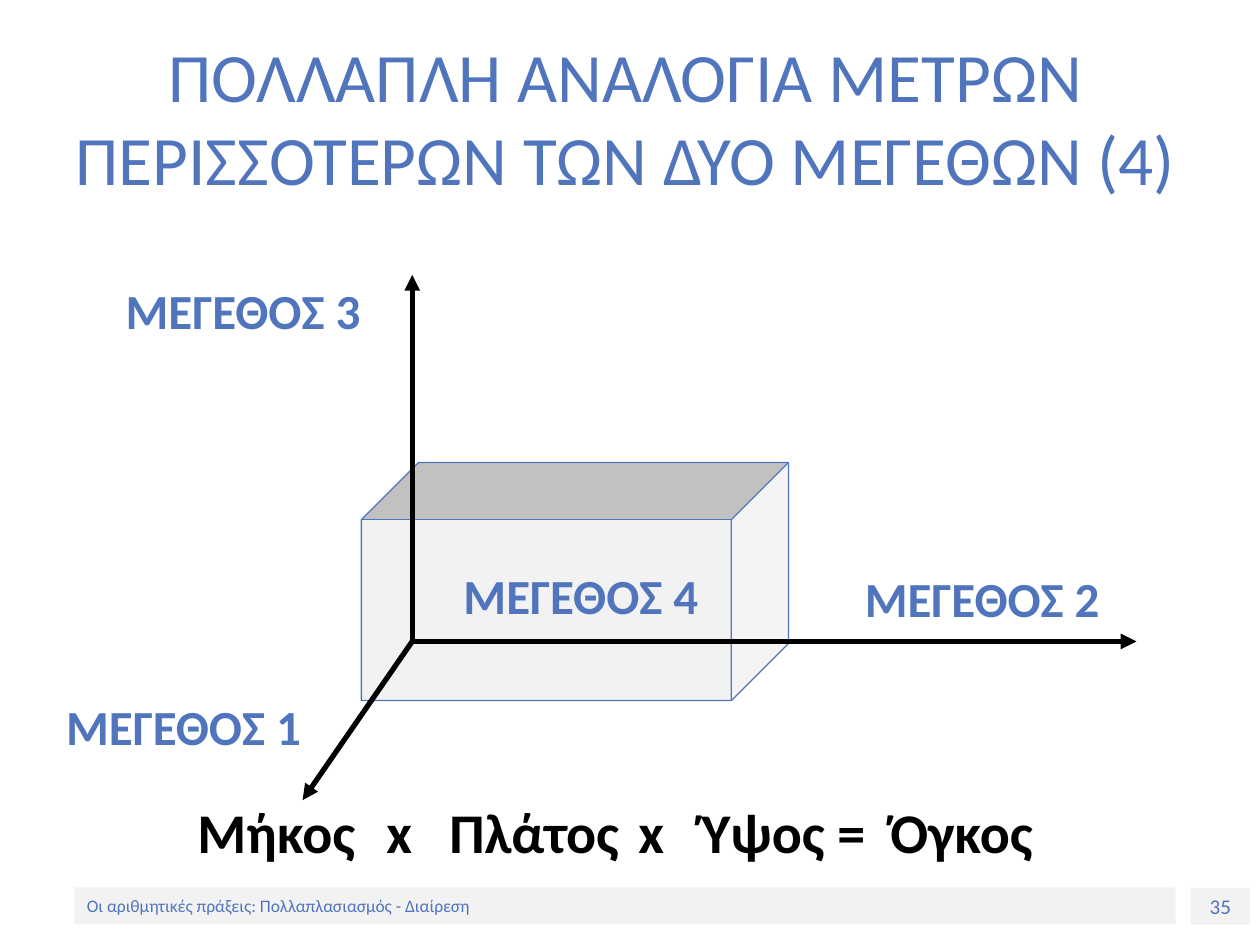
from dataclasses import dataclass

from lxml import etree
from pptx import Presentation
from pptx import util as u
from pptx.dml.color import RGBColor
from pptx.enum import shapes, text
from pptx.oxml.ns import qn


@dataclass(frozen=True)
class Theme:
    font: str = "Calibri"
    accent: RGBColor = RGBColor(0x50, 0x75, 0xBC)
    pale: RGBColor = RGBColor(0xF2, 0xF2, 0xF2)
    ink: RGBColor = RGBColor(0, 0, 0)
    title: float = 39.6
    formula: float = 32
    label: float = 28
    number: float = 12
    footer: float = 10


def write(frame, words, size, color, font, bold=False,
          align=text.PP_ALIGN.CENTER, anchor=text.MSO_ANCHOR.TOP):
    """Fill a text frame with one formatted paragraph."""
    frame.word_wrap = True
    frame.auto_size = text.MSO_AUTO_SIZE.NONE
    frame.vertical_anchor = anchor
    frame.text = words
    paragraph = frame.paragraphs[0]
    paragraph.alignment = align
    for run in paragraph.runs:
        run.font.name = font
        run.font.size = u.Pt(size)
        run.font.bold = bold
        run.font.color.rgb = color
    return paragraph


class SlideBuilder:
    def __init__(self, slide, theme):
        self.slide = slide
        self.theme = theme

    def title(self, words, box):
        heading = self.slide.shapes.title
        heading.left, heading.top, heading.width, heading.height = map(u.Cm, box)
        write(heading.text_frame, words, self.theme.title, self.theme.accent,
              self.theme.font, anchor=text.MSO_ANCHOR.MIDDLE)

    def label(self, words, box, size=None, color=None, **style):
        frame = self.slide.shapes.add_textbox(*map(u.Cm, box)).text_frame
        return write(frame, words, size or self.theme.label,
                     color or self.theme.accent, self.theme.font, bold=True, **style)

    def tabbed(self, words, box, indent, stops):
        paragraph = self.label(words, box, self.theme.formula, self.theme.ink,
                               align=text.PP_ALIGN.LEFT)
        properties = paragraph._p.get_or_add_pPr()
        properties.set("marL", str(u.Cm(indent)))
        properties.set("indent", "0")
        tabs = etree.SubElement(properties, qn("a:tabLst"))
        for stop in stops:
            etree.SubElement(tabs, qn("a:tab"), pos=str(u.Cm(stop)), algn="l")

    def solid(self, kind, box):
        shape = self.slide.shapes.add_shape(kind, *map(u.Cm, box))
        shape.shadow.inherit = False
        shape.fill.solid()
        shape.fill.fore_color.rgb = self.theme.pale
        return shape

    def band(self, words, box, size, align):
        strip = self.solid(shapes.MSO_SHAPE.RECTANGLE, box)
        strip.line.fill.background()
        write(strip.text_frame, words, size, self.theme.accent, self.theme.font,
              align=align, anchor=text.MSO_ANCHOR.MIDDLE)

    def cuboid(self, box, depth):
        block = self.solid(shapes.MSO_SHAPE.CUBE, box)
        block.adjustments[0] = depth
        block.line.color.rgb = self.theme.accent
        block.line.width = u.Pt(0.75)
        block.rotation = 270
        block._element.spPr.find(qn("a:xfrm")).set("flipV", "1")

    def axis(self, start, end):
        arrow = self.slide.shapes.add_connector(
            shapes.MSO_CONNECTOR.STRAIGHT, *map(u.Cm, start + end))
        arrow.line.color.rgb = self.theme.ink
        arrow.line.width = u.Pt(3)
        etree.SubElement(arrow.line._get_or_add_ln(), qn("a:tailEnd"), type="triangle")
        etree.SubElement(arrow._element.spPr, qn("a:effectLst"))


def main():
    deck = Presentation()
    deck.slide_width, deck.slide_height = u.Cm(25.4), u.Cm(19.05)
    theme = Theme()
    page = SlideBuilder(deck.slides.add_slide(deck.slide_layouts[5]), theme)

    # Footer and page number
    page.band("35", (24, 17.9, 1.2, 0.74), theme.number, text.PP_ALIGN.CENTER)
    page.band("Οι αριθμητικές πράξεις: Πολλαπλασιασμός - Διαίρεση",
              (1.5, 17.89, 22.2, 0.74), theme.footer, text.PP_ALIGN.LEFT)

    page.title("ΠΟΛΛΑΠΛΗ ΑΝΑΛΟΓΙΑ ΜΕΤΡΩΝ\vΠΕΡΙΣΣΟΤΕΡΩΝ ΤΩΝ ΔΥΟ ΜΕΓΕΘΩΝ (4)",
               (0.71, 0.76, 23.8, 3.18))

    # Volume with the three axes of its measures
    page.cuboid((9.19, 7.42, 4.8, 8.61), depth=0.24)
    origin = (8.31, 12.93)
    for tip in ((6.1, 16.13), (22.91, 12.93), (8.31, 5.54)):
        page.axis(origin, tip)

    # Names of the magnitudes: left, top, width
    label_height = 1.45
    places = ((0.3, 13.92, 6.8), (16, 11.33, 7.6), (1.7, 5.54, 6.4), (8.31, 11.28, 6.8))
    for number, place in enumerate(places, 1):
        page.label(f"ΜΕΓΕΘΟΣ {number}", place + (label_height,))

    # Formula, with its terms on tab stops
    page.tabbed("Μήκος\tx\tΠλάτος\tx\tΎψος =\tΌγκος", (1.9, 15.95, 21, 1.78),
                indent=1.83, stops=(5.77, 7.06, 10.97, 11.89, 15.72))

    deck.save("out.pptx")


if __name__ == "__main__":
    main()
